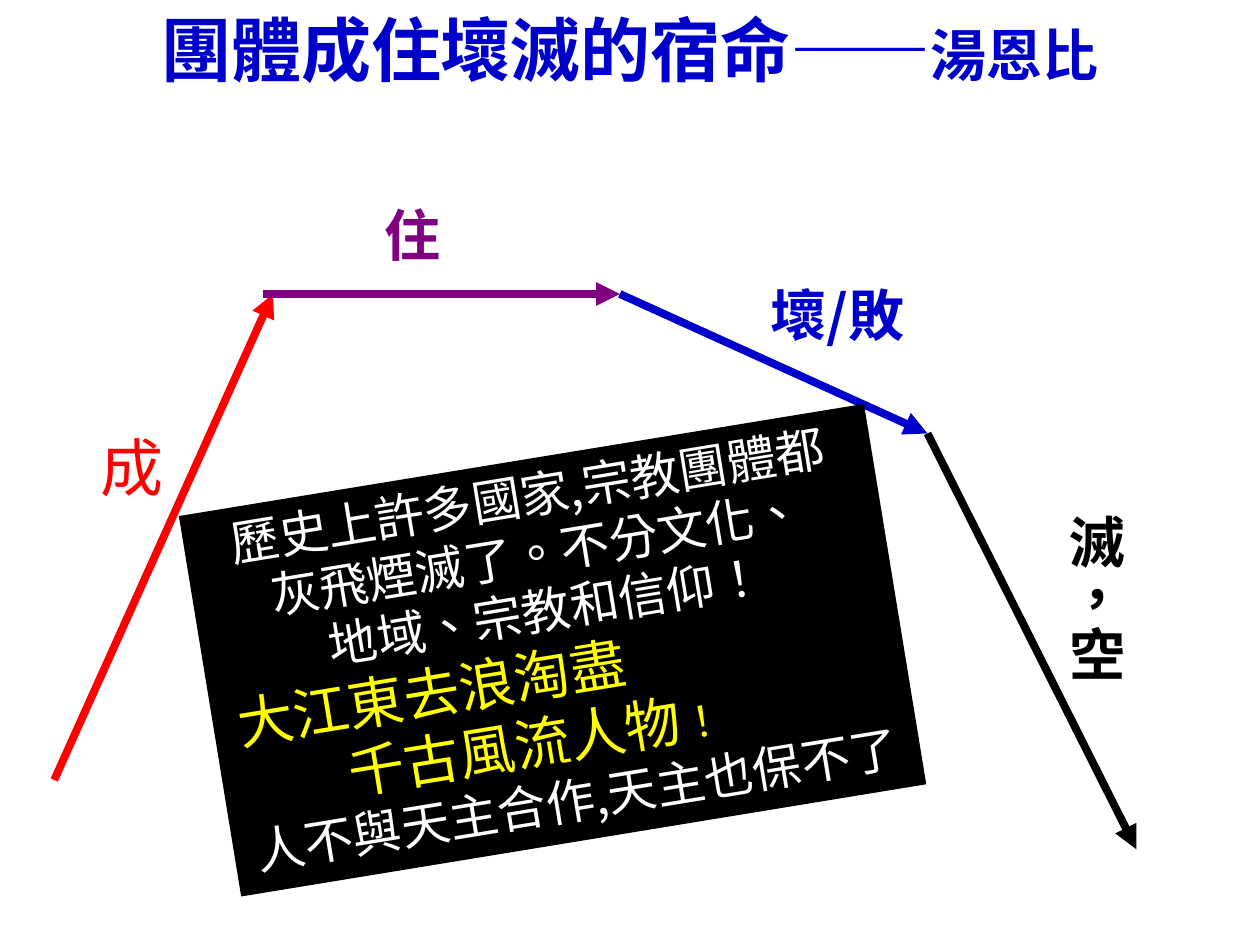
from dataclasses import dataclass

from lxml.etree import SubElement
from pptx import Presentation
from pptx.dml.color import RGBColor as Color
from pptx.enum.lang import MSO_LANGUAGE_ID as Language
from pptx.enum.shapes import MSO_CONNECTOR as Connector, MSO_SHAPE as Preset
from pptx.enum.text import MSO_ANCHOR as Anchor, MSO_AUTO_SIZE as AutoSize, PP_ALIGN as Align
from pptx.oxml.ns import qn
from pptx.util import Pt


@dataclass(frozen=True)
class Theme:
    blue: str = "0000CC"
    red: str = "FF0000"
    purple: str = "800080"
    black: str = "000000"
    white: str = "FFFFFF"
    yellow: str = "FFFF00"
    cjk: str = "Noto Sans CJK SC"
    latin: str = "Arial"
    title: int = 40
    stage: int = 36
    label: int = 32
    body: int = 28
    small: int = 24
    arrow: float = 4.5
    leading: float = 1.19


THEME = Theme()


@dataclass(frozen=True)
class Arrow:
    start: tuple[float, float]
    end: tuple[float, float]
    color: str


@dataclass(frozen=True)
class Label:
    text: str
    box: tuple[float, float, float, float]
    color: str
    size: int = THEME.label
    font: str = THEME.cjk
    bold: bool = True
    vertical: bool = False


@dataclass(frozen=True)
class Line:
    text: str
    size: int = THEME.body
    color: str = THEME.white
    indent: float | None = None
    ending: str = ""


ARROWS = [
    Arrow((31, 445.7), (156, 168), THEME.red),
    Arrow((150.5, 168), (354.2, 168), THEME.purple),
    Arrow((354.2, 168), (530, 247.7), THEME.blue),
    Arrow((530, 247.7), (649.4, 485.3), THEME.black),
]
LABELS = [
    Label("成", (50.4, 242, 85, 50.4), THEME.red, THEME.stage, THEME.latin, False),
    Label("住", (212.4, 111.6, 90.7, 45.4), THEME.purple, font=THEME.latin),
    Label("壞/敗", (433.4, 157, 108, 45.4), THEME.blue),
    Label("滅，空", (595.4, 286.6, 53.3, 113), THEME.black, vertical=True),
]
LINES = [
    Line("歷史上許多國家,宗教團體都"),
    Line("灰飛煙滅了。不分文化、"),
    Line("地域、宗教和信仰！"),
    Line("大江東去浪淘盡", THEME.label, THEME.yellow, 12),
    Line("千古風流人物", THEME.label, THEME.yellow, 70, "！"),
    Line("人不與天主合作,天主也保不了"),
]


def style_run(run, size: int, color: str, font: str = THEME.cjk, bold: bool = False) -> None:
    run.font.size = Pt(size)
    run.font.bold = bold
    run.font.name = font
    run.font.language_id = Language.TRADITIONAL_CHINESE
    run.font.color.rgb = Color.from_string(color)
    SubElement(run.font._element, qn("a:ea")).set("typeface", THEME.cjk)


def set_frame(text_frame, side_margin: float = 7.2) -> None:
    text_frame.word_wrap = True
    text_frame.auto_size = AutoSize.NONE
    text_frame.vertical_anchor = Anchor.TOP
    text_frame.margin_left = text_frame.margin_right = Pt(side_margin)
    text_frame.margin_top = text_frame.margin_bottom = Pt(3.6)


def add_title(slide) -> None:
    title = slide.shapes.title
    title.left, title.top, title.width, title.height = Pt(0), Pt(0), Pt(720), Pt(540)
    set_frame(title.text_frame)
    title.text_frame.text = "團體成住壞滅的宿命——"
    paragraph = title.text_frame.paragraphs[0]
    paragraph.alignment = Align.CENTER
    paragraph.space_before = Pt(0)
    paragraph.line_spacing = Pt(48)
    style_run(paragraph.runs[0], THEME.title, THEME.blue, bold=True)
    author = paragraph.add_run()
    author.text = "湯恩比"
    style_run(author, THEME.label, THEME.blue, bold=True)


def add_arrow(slide, arrow: Arrow) -> None:
    points = [Pt(value) for value in arrow.start + arrow.end]
    connector = slide.shapes.add_connector(Connector.STRAIGHT, *points)
    connector.line.width = Pt(THEME.arrow)
    connector.line.color.rgb = Color.from_string(arrow.color)
    SubElement(connector.line._get_or_add_ln(), qn("a:tailEnd")).set("type", "triangle")
    SubElement(connector._element.spPr, qn("a:effectLst"))


def add_label(slide, label: Label) -> None:
    shape = slide.shapes.add_textbox(*(Pt(value) for value in label.box))
    text_frame = shape.text_frame
    set_frame(text_frame)
    if label.vertical:
        text_frame._txBody.bodyPr.set("vert", "eaVert")
    text_frame.text = label.text
    paragraph = text_frame.paragraphs[0]
    paragraph.line_spacing = Pt(label.size * THEME.leading)
    style_run(paragraph.runs[0], label.size, label.color, label.font, label.bold)


def add_panel(slide, lines: list[Line]) -> None:
    shape = slide.shapes.add_shape(Preset.RECTANGLE, Pt(117.4), Pt(261.4), Pt(396.7), Pt(220.3))
    shape.rotation = 350.7
    shape.shadow.inherit = False
    shape.fill.solid()
    shape.fill.fore_color.rgb = Color.from_string(THEME.black)
    shape.line.fill.background()
    text_frame = shape.text_frame
    set_frame(text_frame, side_margin=2)
    text_frame.text = "\n".join(line.text for line in lines)
    for paragraph, line in zip(text_frame.paragraphs, lines):
        paragraph.line_spacing = Pt(line.size * THEME.leading)
        paragraph.alignment = Align.CENTER if line.indent is None else Align.LEFT
        if line.indent is not None:
            properties = paragraph._p.get_or_add_pPr()
            properties.set("marL", str(Pt(line.indent)))
            properties.set("indent", "0")
        style_run(paragraph.runs[0], line.size, line.color)
        if line.ending:
            ending = paragraph.add_run()
            ending.text = line.ending
            style_run(ending, THEME.small, line.color)


def main() -> None:
    presentation = Presentation()
    presentation.slide_width, presentation.slide_height = Pt(720), Pt(540)
    slide = presentation.slides.add_slide(presentation.slide_layouts[5])
    add_title(slide)
    for arrow in ARROWS:
        add_arrow(slide, arrow)
    for label in LABELS:
        add_label(slide, label)
    add_panel(slide, LINES)
    presentation.save("out.pptx")


if __name__ == "__main__":
    main()
